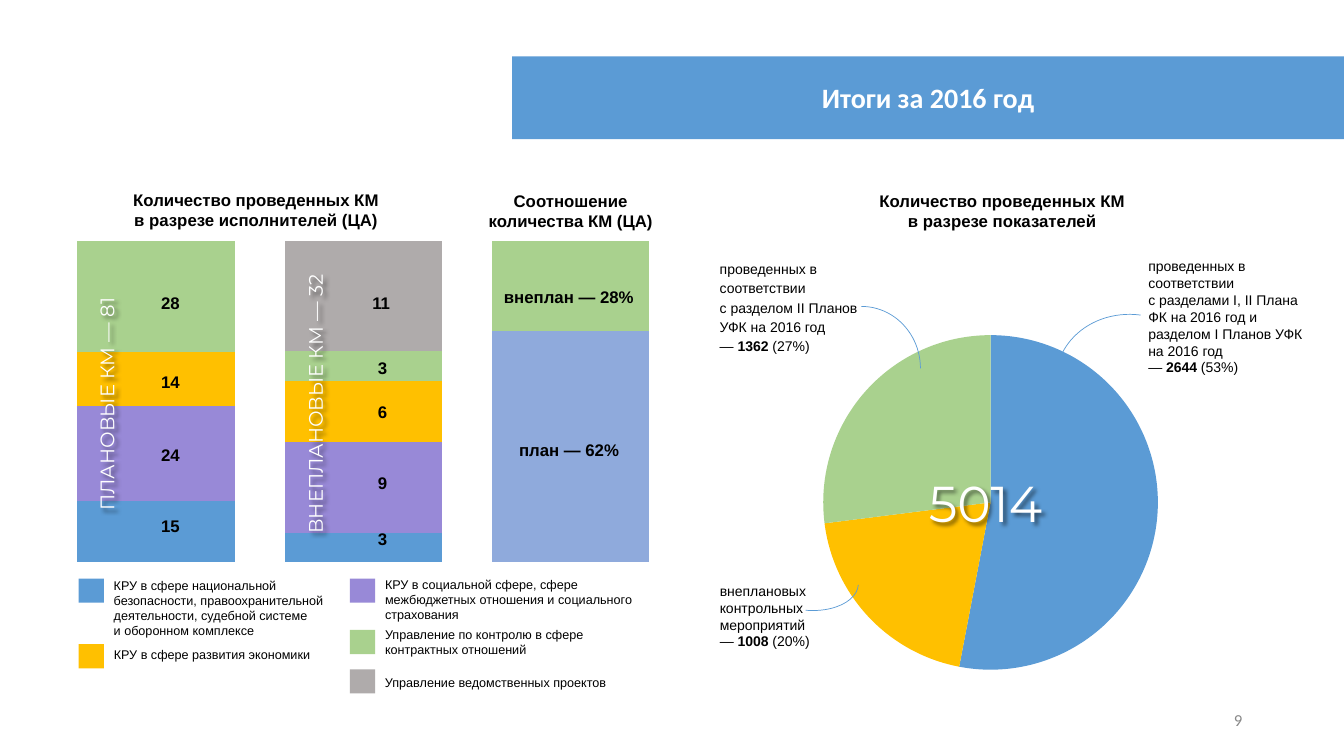
from lxml.etree import SubElement
from pptx import Presentation
from pptx.chart.data import CategoryChartData
from pptx.dml.color import RGBColor
from pptx.enum.chart import XL_CHART_TYPE
from pptx.enum.shapes import MSO_SHAPE
from pptx.enum.text import MSO_ANCHOR, MSO_AUTO_SIZE, PP_ALIGN
from pptx.oxml import parse_xml
from pptx.oxml.ns import nsdecls, qn
from pptx.util import Inches, Pt

BLUE, PALE, VIOLET = "5B9BD5", "8FAADC", "9889D7"
GOLD, GREEN, GRAY = "FFC000", "A9D18E", "AFABAB"
BLACK, WHITE = "000000", "FFFFFF"
LEFT, MID, RIGHT = PP_ALIGN.LEFT, PP_ALIGN.CENTER, PP_ALIGN.RIGHT


def color(code):
    return RGBColor.from_string(code)


def paint(fill, code):
    fill.solid()
    fill.fore_color.rgb = color(code)


def place(at):
    return [Inches(n) for n in at]


class Page:
    face = "Arial"

    def __init__(self, deck):
        self.slide = deck.slides.add_slide(deck.slide_layouts[5])
        self.shapes = self.slide.shapes

    def font(self, font, size, code, bold=False, face=None):
        font.name = face or self.face
        font.size = Pt(size)
        font.bold = bold
        font.color.rgb = color(code)

    def title(self, at, words):
        shape = self.shapes.title
        shape.left, shape.top, shape.width, shape.height = place(at)
        paint(shape.fill, BLUE)
        frame = shape.text_frame
        frame.auto_size = MSO_AUTO_SIZE.NONE
        frame.vertical_anchor = MSO_ANCHOR.MIDDLE
        para = frame.paragraphs[0]
        para.text = words
        para.alignment = MID
        self.font(para.font, 20, WHITE, True, "Calibri")

    def text(self, at, lines, size, code=BLACK, bold=False, face=None,
             align=LEFT, wrap=True, space=None):
        box = self.shapes.add_textbox(*place(at))
        frame = box.text_frame
        frame.word_wrap = wrap
        frame.auto_size = MSO_AUTO_SIZE.SHAPE_TO_FIT_TEXT
        for i, line in enumerate(lines):
            para = frame.add_paragraph() if i else frame.paragraphs[0]
            para.alignment = align
            if space:
                para.line_spacing = space
            self.font(para.font, size, code, bold, face)
            parts = line.split("*")
            if len(parts) == 1:
                para.text = line
                continue
            for j, part in enumerate(parts):
                run = para.add_run()
                run.text = part
                if j % 2:
                    run.font.bold = True
        return box

    def head(self, at, words):
        self.text(at, [words], 12, bold=True, align=MID)

    def label(self, at, words, align=LEFT):
        self.text(at, [words], 12, bold=True, align=align, wrap=False)

    def glow(self, at, words, size, turn=0):
        box = self.text(at, [words], size, WHITE, face="Montserrat", align=MID)
        box.rotation = turn
        box.element.spPr.append(parse_xml(
            f'<a:effectLst {nsdecls("a")}><a:outerShdw blurRad="38100" '
            'dist="38100" dir="2700000" algn="tl"><a:srgbClr val="000000">'
            '<a:alpha val="50000"/></a:srgbClr></a:outerShdw></a:effectLst>'))

    def key(self, left, top, code):
        box = self.shapes.add_shape(
            MSO_SHAPE.RECTANGLE, *place((left, top, 0.25, 0.24)))
        box.shadow.inherit = False
        paint(box.fill, code)
        box.line.fill.background()

    def arc(self, at, turn=0, start=270):
        arc = self.shapes.add_shape(MSO_SHAPE.ARC, *place(at))
        arc.shadow.inherit = False
        arc.rotation = turn
        arc.adjustments[0] = start * 0.6
        arc.fill.background()
        arc.line.color.rgb = color(BLUE)
        arc.line.width = Pt(0.5)

    def chart(self, kind, at, inner, rows):
        data = CategoryChartData()
        data.categories = ["1", "2", "3"]
        for i, (vals, codes) in enumerate(rows, 1):
            data.add_series(f"Series {i}", vals)
        chart = self.shapes.add_chart(kind, *place(at), data).chart
        chart.has_legend = chart.has_title = False
        self.font(chart.font, 18, BLACK, face="Calibri")
        plot = chart.plots[0]
        plot.vary_by_categories = False
        for series, (vals, codes) in zip(plot.series, rows):
            paint(series.format.fill, codes[0])
            for i, code in enumerate(codes):
                paint(series.points[i].format.fill, code)
        area = chart._chartSpace.chart.plotArea
        for old in area.findall(qn("c:layout")):
            area.remove(old)
        layout = parse_xml(f'<c:layout {nsdecls("c")}/>')
        manual = SubElement(layout, qn("c:manualLayout"))
        marks = [("layoutTarget", "inner"), ("xMode", "edge"), ("yMode", "edge")]
        for name, val in marks + list(zip("xywh", inner)):
            SubElement(manual, qn(f"c:{name}")).set("val", str(val))
        area.insert(0, layout)
        return chart

    def bars(self, at, rows):
        chart = self.chart(XL_CHART_TYPE.COLUMN_STACKED_100, at,
                           (0.02, 0.02, 0.96, 0.96), rows)
        chart.plots[0].gap_width = 32
        chart.plots[0].overlap = 100
        chart.value_axis.has_major_gridlines = False
        chart.value_axis.visible = False
        chart.category_axis.visible = False


def main():
    deck = Presentation()
    deck.slide_width, deck.slide_height = Inches(13.33), Inches(7.5)
    page = Page(deck)
    page.title((5.08, 0.56, 8.25, 0.82), "Итоги за 2016 год")
    page.text((9.42, 6.99, 3, 0.3), ["9"], 12, "898989",
              face="Calibri", align=RIGHT)

    page.bars((0.39, 2.33, 6.43, 3.31), [
        ((19, 9, 72), (BLUE, BLUE, PALE)),
        ((30, 28, 28), (VIOLET, VIOLET, GREEN)),
        ((17, 19, None), (GOLD,)),
        ((35, 9, None), (GREEN,)),
        ((0, 34, None), (GRAY,)),
    ])
    page.head((0.76, 1.83, 3.56, 0.5),
              "Количество проведенных КМ\nв разрезе исполнителей (ЦА)")
    page.head((4.65, 1.84, 2.02, 0.5), "Соотношение количества КМ (ЦА)")
    page.label((4.9, 2.8, 1.5, 0.3), "внеплан — 28%")
    page.label((5.05, 4.31, 1.2, 0.3), "план — 62%")
    for top, count in ((2.86, "28"), (3.64, "14"), (4.36, "24"), (5.07, "15")):
        page.label((1.5, top, 0.39, 0.3), count)
    for top, count in ((2.86, "11"), (3.5, "3"), (3.94, "6"),
                       (4.64, "9"), (5.2, "3")):
        page.label((3.65 if len(count) == 1 else 3.59, top,
                    0.29 if len(count) == 1 else 0.38, 0.3), count, MID)
    page.glow((-0.3, 3.84, 2.72, 0.34), "ПЛАНОВЫЕ КМ — 81", 14, 270)
    page.glow((1.63, 3.84, 3, 0.34), "ВНЕПЛАНОВЫЕ КМ — 32", 14, 270)

    for left, top, code, rise, wide, high, lines in (
        (0.78, 5.74, BLUE, 5.68, 2.5, 0.71,
         ["КРУ в сфере национальной безопасности, правоохранительной "
          "деятельности, судебной системе", "и оборонном комплексе"]),
        (0.78, 6.39, GOLD, 6.37, 2.71, 0.25,
         ["КРУ в сфере развития экономики"]),
        (3.47, 5.74, VIOLET, 5.67, 2.71, 0.56,
         ["КРУ в социальной сфере, сфере межбюджетных отношения "
          "и социального страхования"]),
        (3.47, 6.25, GREEN, 6.17, 2.71, 0.4,
         ["Управление по контролю в сфере контрактных отношений"]),
        (3.47, 6.64, GRAY, 6.65, 2.56, 0.25,
         ["Управление ведомственных проектов"]),
    ):
        page.key(left, top, code)
        page.text((left + 0.25, rise, wide, high), lines, 9)

    page.chart(XL_CHART_TYPE.PIE, (7.96, 3.19, 3.73, 3.59),
               (0.055, 0.0375, 0.89, 0.925),
               [((53, 20, 27), (BLUE, GOLD, GREEN))])
    page.head((8.59, 1.84, 2.7, 0.5),
              "Количество проведенных КМ в разрезе показателей")
    page.text((11.29, 2.51, 1.75, 1.45),
              ["проведенных в соответствии",
               "с разделами I, II Плана ФК на 2016 год и разделом I "
               "Планов УФК на 2016 год", "— *2644* (53%)"], 10)
    page.text((7.04, 5.73, 1.25, 0.77),
              ["внеплановых контрольных мероприятий", "— *1008* (20%)"], 10)
    page.text((7.04, 2.51, 1.84, 1.07),
              ["проведенных в соответствии",
               "с разделом II Планов УФК на 2016 год",
               "— *1362* (27%)"], 10, space=1.15)
    page.arc((7.96, 3.04, 1.17, 1.23))
    page.arc((10.55, 3.04, 1.35, 1.51), 277.5, 286)
    page.arc((7.72, 5.26, 0.59, 1), 94.9)
    page.glow((8.75, 4.63, 2.05, 0.71), "5014", 36)
    deck.save("out.pptx")


if __name__ == "__main__":
    main()
